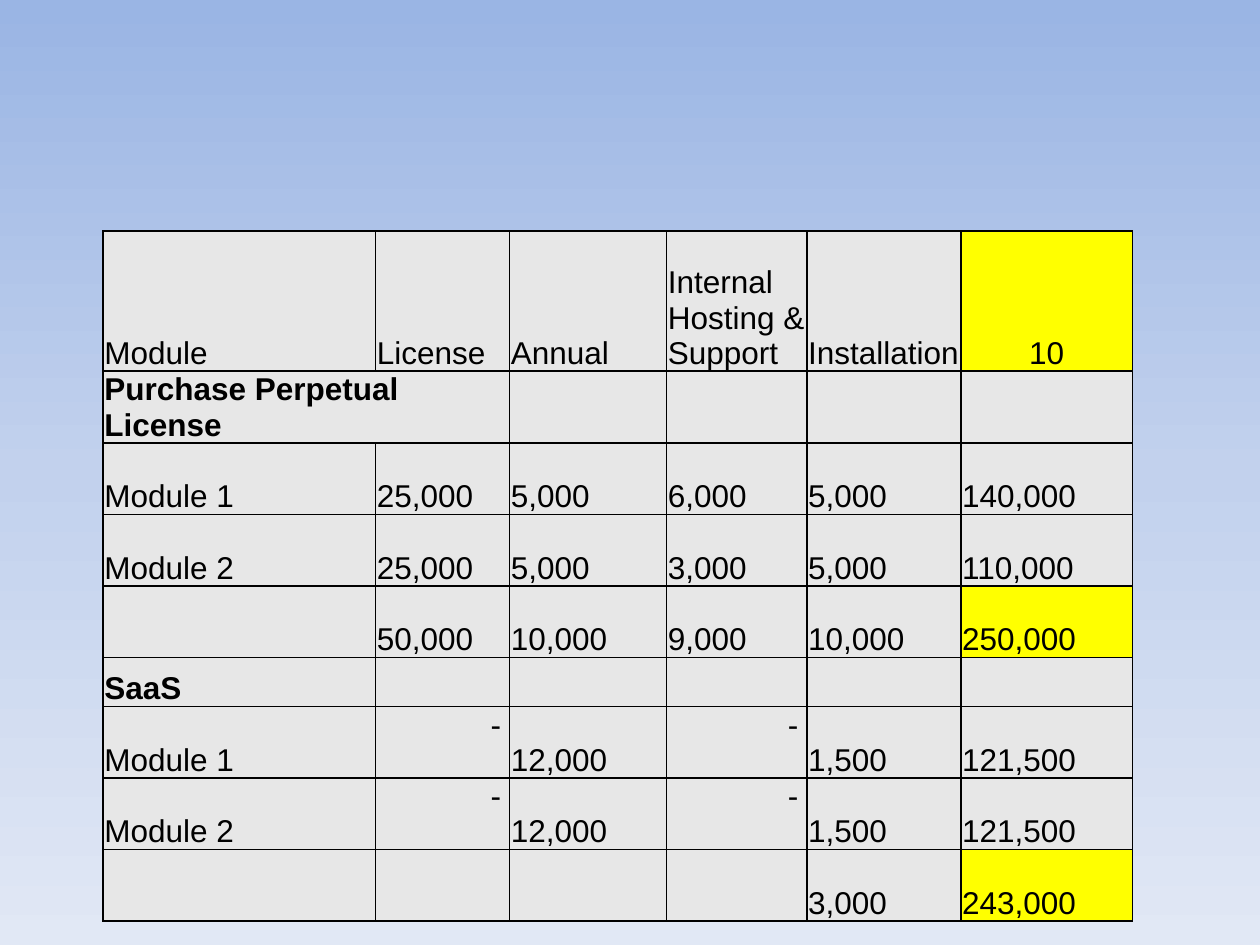
"""Builds a slide that compares licence and SaaS costs in one table."""
from copy import deepcopy

from lxml.etree import SubElement
from pptx import Presentation
from pptx.dml.color import RGBColor
from pptx.enum.text import MSO_ANCHOR, PP_ALIGN
from pptx.oxml.ns import qn
from pptx.util import Pt

BLACK = RGBColor(0x00, 0x00, 0x00)
GREY = RGBColor(0xE7, 0xE7, 0xE7)
YELLOW = RGBColor(0xFF, 0xFF, 0x00)
SKY = [RGBColor(0x9A, 0xB5, 0xE4), RGBColor(0xC2, 0xD1, 0xED), RGBColor(0xE1, 0xE8, 0xF5)]

WIDTHS = [155.7, 76.6, 89.7, 80.2, 88, 97.9]
HEIGHTS = [80] + [40.9] * 4 + [28] + [40.9] * 3
ROWS = [
    ["Module", "License", "Annual", "Internal Hosting & Support", "Installation", "10"],
    ["Purchase Perpetual License", "", "", "", "", ""],
    ["Module 1", "25,000", "5,000", "6,000", "5,000", "140,000"],
    ["Module 2", "25,000", "5,000", "3,000", "5,000", "110,000"],
    ["", "50,000", "10,000", "9,000", "10,000", "250,000"],
    ["SaaS", "", "", "", "", ""],
    ["Module 1", "-", "12,000", "-", "1,500", "121,500"],
    ["Module 2", "-", "12,000", "-", "1,500", "121,500"],
    ["", "", "", "", "3,000", "243,000"],
]
HEADS = {(1, 0), (5, 0)}
TOTALS = {(0, 5), (4, 5), (8, 5)}


def apply(item, values):
    for name, value in values.items():
        setattr(item, name, value)


class Painter:
    font = {"name": "Arial", "size": Pt(18), "bold": False}
    inset = {"margin_left": Pt(0.7), "margin_right": Pt(0.7), "margin_top": Pt(0.7),
             "margin_bottom": Pt(0), "vertical_anchor": MSO_ANCHOR.BOTTOM}
    dash = {"margin_right": Pt(5), "vertical_anchor": MSO_ANCHOR.TOP}

    def __init__(self, slide):
        self.slide = slide

    def backdrop(self, colors):
        fill = self.slide.background.fill
        fill.gradient()
        fill.gradient_angle = 270
        stops = next(self.slide.element.iter(qn("a:gsLst")))
        stops.insert(1, deepcopy(stops[0]))
        for step, (stop, color) in enumerate(zip(fill.gradient_stops, colors)):
            stop.position = step / (len(colors) - 1)
            stop.color.rgb = color

    def border(self, cell):
        props = cell._tc.get_or_add_tcPr()
        for side in ("a:lnL", "a:lnR", "a:lnT", "a:lnB"):
            line = SubElement(props, qn(side), w=str(Pt(1)))
            paint = SubElement(line, qn("a:solidFill"))
            SubElement(paint, qn("a:srgbClr"), val=str(BLACK))

    def cell(self, cell, text, color, align, bold):
        self.border(cell)
        cell.fill.solid()
        cell.fill.fore_color.rgb = color
        apply(cell, self.inset)
        if text == "-":
            apply(cell, self.dash)
        para = cell.text_frame.paragraphs[0]
        para.alignment = align
        apply(para.font, self.font)
        if text:
            run = para.add_run()
            run.text = text
            apply(run.font, {**self.font, "bold": bold})
            run.font.color.rgb = BLACK

    def table(self, left, top, rows, widths, heights):
        table = self.slide.shapes.add_table(
            len(rows), len(widths), Pt(left), Pt(top), Pt(sum(widths)), Pt(sum(heights))).table
        apply(table, {"first_row": False, "horz_banding": False})
        for column, width in zip(table.columns, widths):
            column.width = Pt(width)
        for row, height in zip(table.rows, heights):
            row.height = Pt(height)
        aligns = {"-": PP_ALIGN.RIGHT, "10": PP_ALIGN.CENTER}
        for r, row in enumerate(rows):
            for c, text in enumerate(row):
                color = YELLOW if (r, c) in TOTALS else GREY
                self.cell(table.cell(r, c), text, color,
                          aligns.get(text, PP_ALIGN.LEFT), (r, c) in HEADS)
        table.cell(1, 0).merge(table.cell(1, 1))


def main():
    deck = Presentation()
    apply(deck, {"slide_width": Pt(720), "slide_height": Pt(540)})
    painter = Painter(deck.slides.add_slide(deck.slide_layouts[6]))
    painter.backdrop(SKY)
    painter.table(59, 132, ROWS, WIDTHS, HEIGHTS)
    deck.save("out.pptx")


if __name__ == "__main__":
    main()
